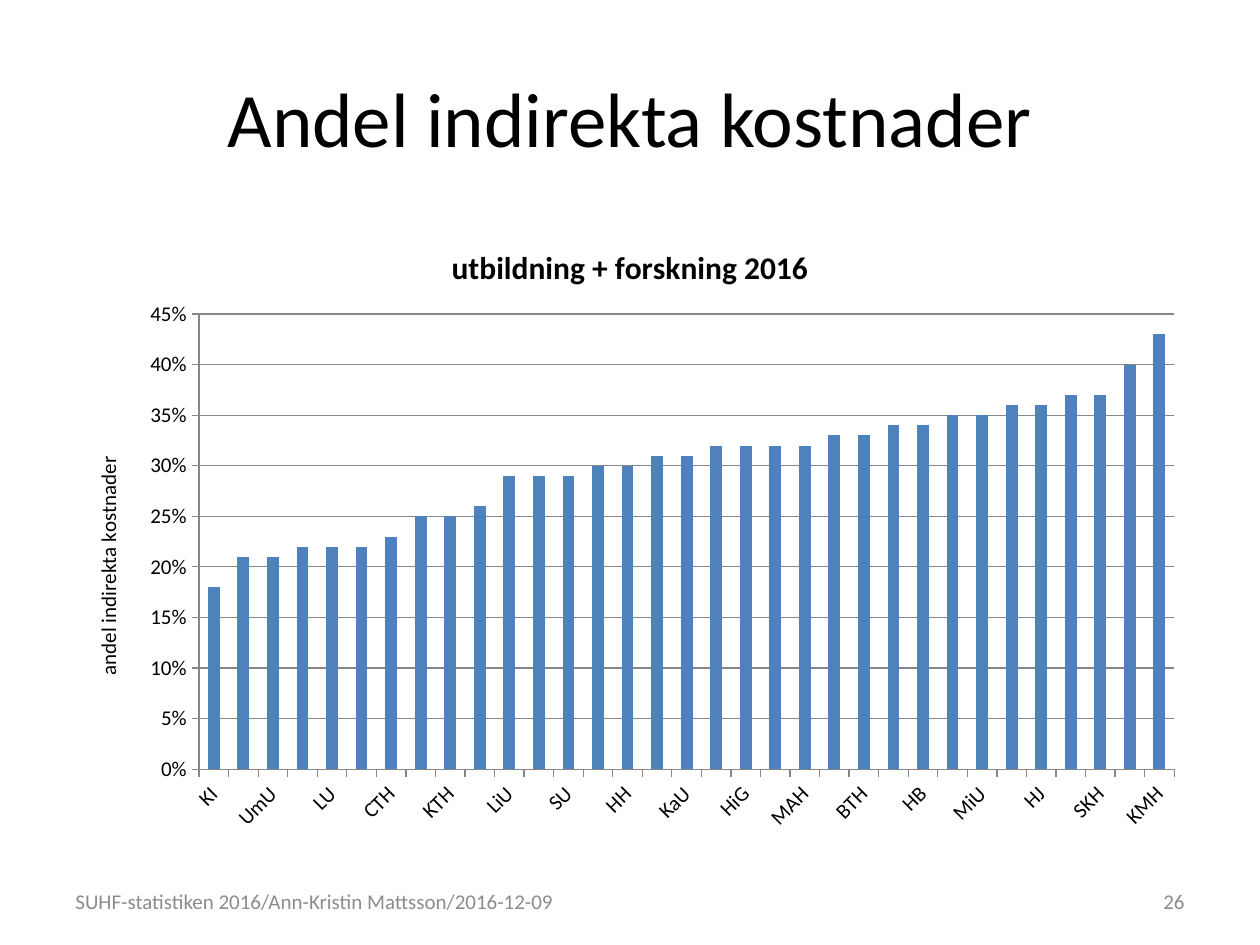
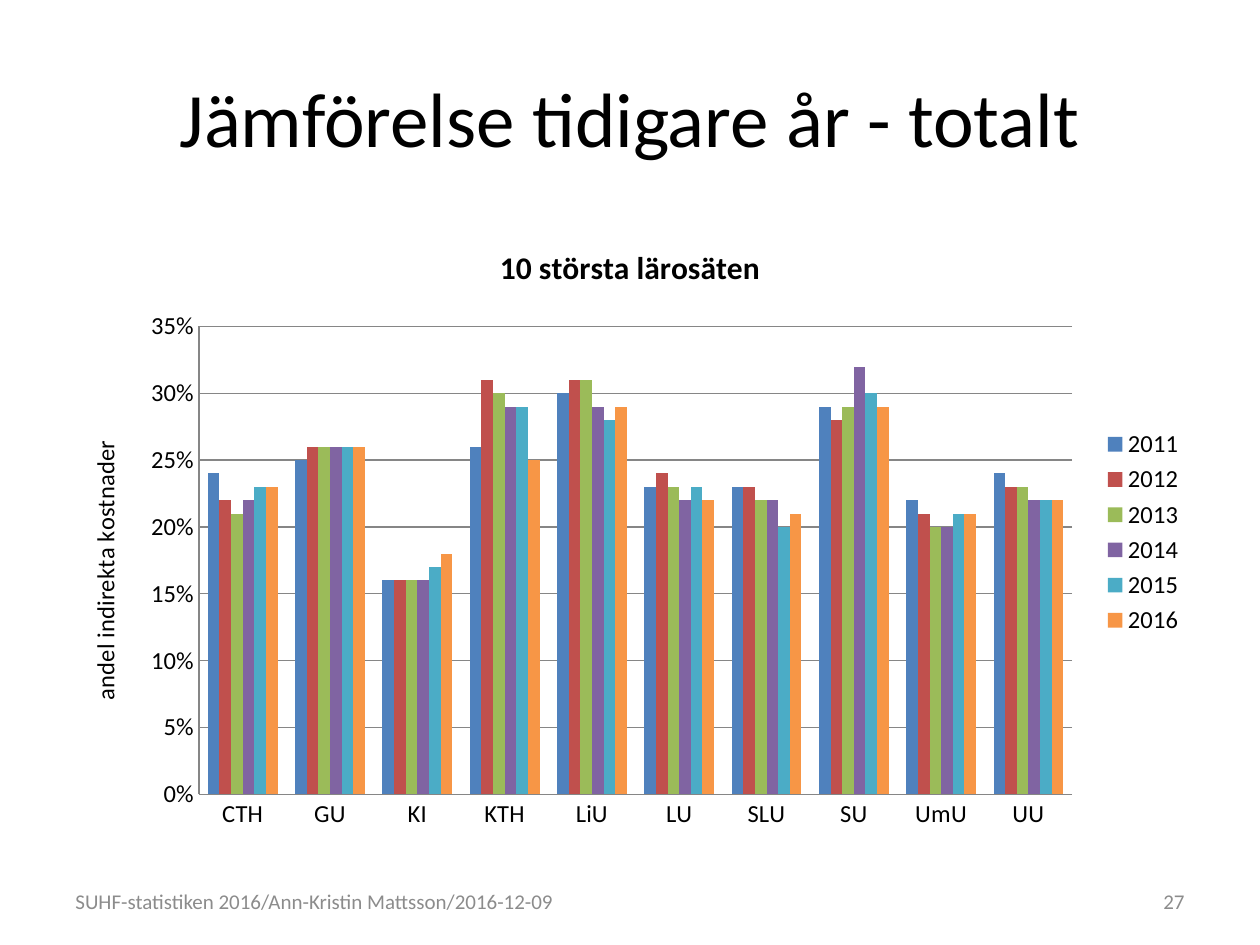
from lxml.etree import SubElement
from pptx import Presentation
from pptx.chart.data import CategoryChartData as ChartData
from pptx.dml.color import RGBColor
from pptx.enum.chart import XL_CHART_TYPE as ChartType
from pptx.enum.chart import XL_LEGEND_POSITION as LegendPosition
from pptx.enum.chart import XL_TICK_MARK as TickMark
from pptx.enum.text import MSO_ANCHOR as Anchor
from pptx.enum.text import PP_ALIGN as Align
from pptx.oxml import parse_xml
from pptx.oxml.ns import nsdecls, qn
from pptx.util import Inches, Pt

WIDTH, HEIGHT = 10, 7.5
MARGIN = 0.05 * WIDTH
CONTENT = WIDTH - 2 * MARGIN
FONT = "Calibri"
BLACK, GREY, LINE = "000000", "8C8C8C", "868686"
SERIES_COLOURS = ["4F81BD", "C0504D", "9BBB59", "8064A2", "4BACC6", "F79646"]

# Regions as left, top, width, height
TITLE_BOX = (MARGIN, 0.04 * HEIGHT, CONTENT, HEIGHT / 6)
CHART_BOX = (MARGIN, 1.75, CONTENT, 0.66 * HEIGHT)
FOOTER_BOX = (MARGIN, 6.95, 5.52, 0.4)
NUMBER_BOX = (WIDTH - MARGIN - 2.33, 6.95, 2.33, 0.4)

FOOTER = "SUHF-statistiken 2016/Ann-Kristin Mattsson/2016-12-09"
AXIS_TITLE = "andel indirekta kostnader"

ALL_SCHOOLS = (
    "KI SLU UmU UU LU LTU CTH FHS KTH GU LiU HD SU ÖU HH MdH KaU LNU HiG SH MAH "
    "HKr BTH HS HB HV MiU KF HJ KKH SKH GIH KMH"
).split()
ALL_SHARES = [
    0.18, 0.21, 0.21, 0.22, 0.22, 0.22, 0.23, 0.25, 0.25, 0.26, 0.29,
    0.29, 0.29, 0.3, 0.3, 0.31, 0.31, 0.32, 0.32, 0.32, 0.32, 0.33,
    0.33, 0.34, 0.34, 0.35, 0.35, 0.36, 0.36, 0.37, 0.37, 0.4, 0.43,
]
LARGEST_SCHOOLS = "CTH GU KI KTH LiU LU SLU SU UmU UU".split()
SHARES_BY_YEAR = {
    "2011": [0.24, 0.25, 0.16, 0.26, 0.3, 0.23, 0.23, 0.29, 0.22, 0.24],
    "2012": [0.22, 0.26, 0.16, 0.31, 0.31, 0.24, 0.23, 0.28, 0.21, 0.23],
    "2013": [0.21, 0.26, 0.16, 0.3, 0.31, 0.23, 0.22, 0.29, 0.2, 0.23],
    "2014": [0.22, 0.26, 0.16, 0.29, 0.29, 0.22, 0.22, 0.32, 0.2, 0.22],
    "2015": [0.23, 0.26, 0.17, 0.29, 0.28, 0.23, 0.2, 0.3, 0.21, 0.22],
    "2016": [0.23, 0.26, 0.18, 0.25, 0.29, 0.22, 0.21, 0.29, 0.21, 0.22],
}


def colour(hex_string):
    return RGBColor.from_string(hex_string)


def style_font(font, size, hex_string=BLACK, bold=False):
    font.name, font.size, font.bold = FONT, Pt(size), bold
    font.color.rgb = colour(hex_string)


def add_text(page, box, text, size, hex_string, align):
    frame = page.shapes.add_textbox(*map(Inches, box)).text_frame
    frame.word_wrap = True
    frame.vertical_anchor = Anchor.MIDDLE
    para = frame.paragraphs[0]
    para.alignment = align
    span = para.add_run()
    span.text = text
    style_font(span.font, size, hex_string)


def write_title(target, text, size, bold=False):
    """Fill the title of a chart or an axis."""
    span = target.text_frame.paragraphs[0].add_run()
    span.text = text
    style_font(span.font, size, bold=bold)


def place_plot(chart, shares):
    """Fix the inner plot area, given as shares of the chart."""
    marks = "".join(
        f'<c:{tag} val="{share}"/>' for tag, share in zip("xywh", shares)
    )
    layout = parse_xml(
        f'<c:layout {nsdecls("c")}><c:manualLayout><c:layoutTarget val="inner"/>'
        f'<c:xMode val="edge"/><c:yMode val="edge"/>{marks}'
        "</c:manualLayout></c:layout>"
    )
    area = chart._chartSpace.chart.plotArea
    for old in area.findall(qn("c:layout")):
        area.remove(old)
    area.insert(0, layout)


def slant_labels(axis, step):
    """Turn the category labels upwards and show every step-th one."""
    element = axis._element
    element.find(qn("c:txPr")).find(qn("a:bodyPr")).set("rot", "-2700000")
    skip = SubElement(element, qn("c:tickLblSkip"))
    skip.set("val", str(step))
    element.find(qn("c:noMultiLvlLbl")).addprevious(skip)


def add_columns(page, box, heading, schools, series, size, top, tick, plot_shares):
    data = ChartData(number_format="0%")
    data.categories = schools
    for name, shares in series.items():
        data.add_series(name, shares)
    frame = page.shapes.add_chart(
        ChartType.COLUMN_CLUSTERED, *map(Inches, box), data
    )
    chart = frame.chart
    style_font(chart.font, 10)
    chart.has_title = True
    write_title(chart.chart_title, heading, 18, bold=True)
    place_plot(chart, plot_shares)

    # Columns
    plot = chart.plots[0]
    plot.gap_width, plot.overlap = 150, 0
    plot.vary_by_categories = False
    for columns, hex_string in zip(plot.series, SERIES_COLOURS):
        columns.format.fill.solid()
        columns.format.fill.fore_color.rgb = colour(hex_string)

    # Axes
    values = chart.value_axis
    for axis in (chart.category_axis, values):
        axis.major_tick_mark, axis.minor_tick_mark = tick, TickMark.NONE
        style_font(axis.tick_labels.font, size)
        axis.format.line.color.rgb = colour(LINE)
        axis.format.line.width = Pt(0.75)
    values.minimum_scale, values.maximum_scale, values.major_unit = 0, top, 0.05
    values.tick_labels.number_format = "0%"
    values.tick_labels.number_format_is_linked = False
    values.has_major_gridlines = True
    values.major_gridlines.format.line.color.rgb = colour(LINE)
    values.major_gridlines.format.line.width = Pt(0.75)
    write_title(values.axis_title, AXIS_TITLE, size)
    body = values.axis_title.text_frame._txBody.find(qn("a:bodyPr"))
    body.set("rot", "-5400000")
    body.set("vert", "horz")

    # Legend
    chart.has_legend = len(series) > 1
    if chart.has_legend:
        chart.legend.position = LegendPosition.RIGHT
        chart.legend.include_in_layout = False
        style_font(chart.legend.font, size)
    return chart


def add_page(deck, title, number):
    """Add a page with the shared title, footer and page number."""
    page = deck.slides.add_slide(deck.slide_layouts[6])
    add_text(page, TITLE_BOX, title, 44, BLACK, Align.CENTER)
    add_text(page, FOOTER_BOX, FOOTER, 12, GREY, Align.LEFT)
    add_text(page, NUMBER_BOX, str(number), 12, GREY, Align.RIGHT)
    return page


def main():
    deck = Presentation()
    deck.slide_width, deck.slide_height = Inches(WIDTH), Inches(HEIGHT)

    # All schools, one year
    page = add_page(deck, "Andel indirekta kostnader", 26)
    chart = add_columns(
        page, CHART_BOX, "utbildning + forskning 2016", ALL_SCHOOLS,
        {"2016": ALL_SHARES}, size=12, top=0.45, tick=TickMark.OUTSIDE,
        plot_shares=(0.12, 0.15, 0.86, 0.73),
    )
    slant_labels(chart.category_axis, 2)

    # Largest schools, year by year
    page = add_page(deck, "Jämförelse tidigare år - totalt", 27)
    add_columns(
        page, CHART_BOX, "10 största lärosäten", LARGEST_SCHOOLS,
        SHARES_BY_YEAR, size=14, top=0.35, tick=TickMark.NONE,
        plot_shares=(0.12, 0.17, 0.77, 0.75),
    )

    deck.save("out.pptx")


if __name__ == "__main__":
    main()
